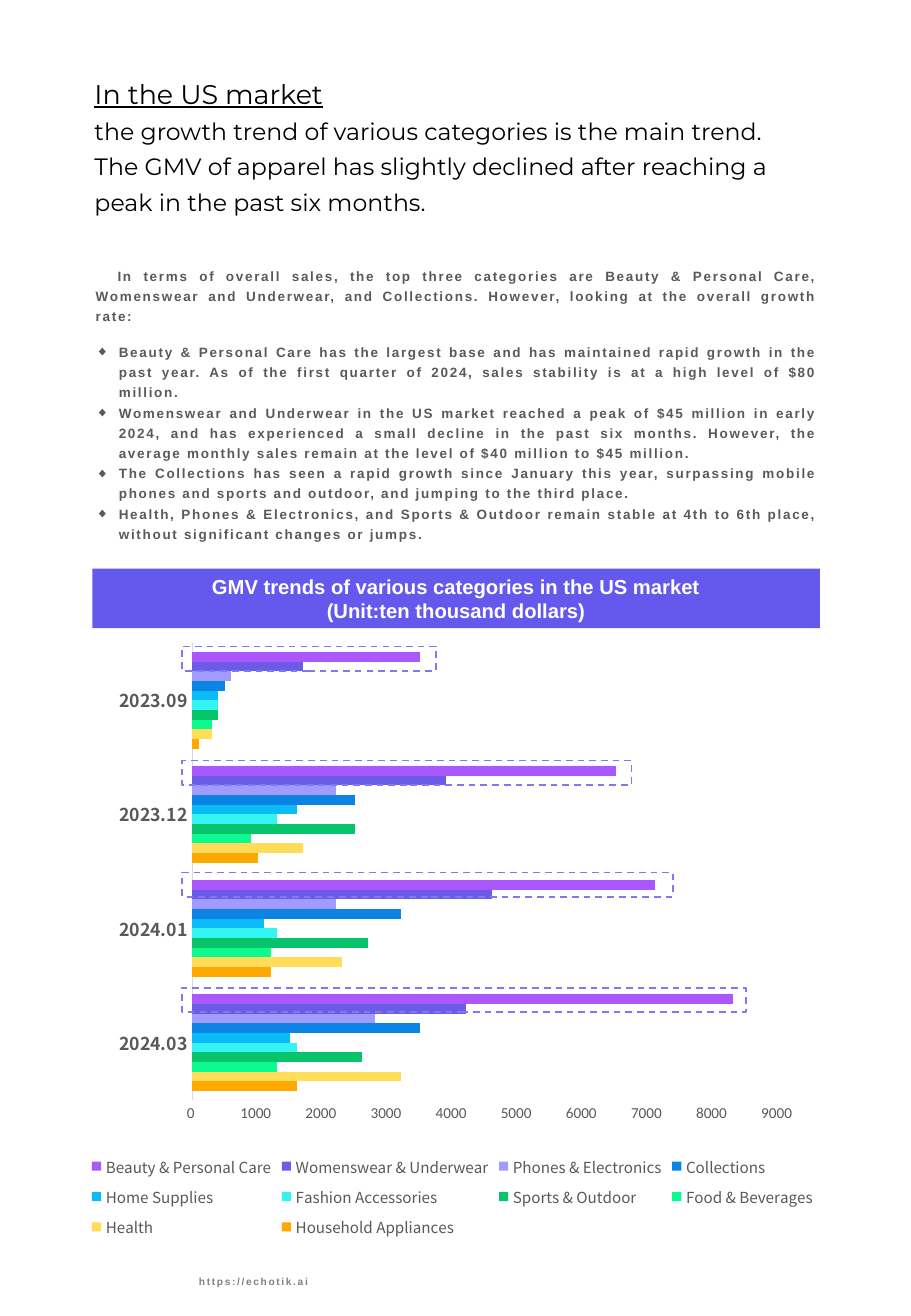
import pptx
import pptx.chart.data
import pptx.dml.color
import pptx.enum.chart
import pptx.enum.dml
import pptx.enum.shapes
import pptx.enum.text
import pptx.oxml
import pptx.oxml.ns
import pptx.util

Inches = pptx.util.Inches
Pt = pptx.util.Pt
RGBColor = pptx.dml.color.RGBColor
ALIGN = pptx.enum.text.PP_ALIGN
qn = pptx.oxml.ns.qn

BLACK = RGBColor(0x00, 0x00, 0x00)
WHITE = RGBColor(0xFF, 0xFF, 0xFF)
TEXT_GREY = RGBColor(0x59, 0x59, 0x59)
FOOTER_GREY = RGBColor(0x80, 0x80, 0x80)
AXIS_GREY = RGBColor(0xD9, 0xD9, 0xD9)
BANNER_PURPLE = RGBColor(0x65, 0x59, 0xED)
DASH_PURPLE = RGBColor(0x81, 0x77, 0xF0)

LABEL_FONT = "Noto Sans CJK SC"

HEADLINE = [
    ("In the US market", 16, True),
    ("the growth trend of various categories is the main trend.", 14, False),
    ("The GMV of apparel has slightly declined after reaching a peak in the past six months.", 14, False),
]
INTRO = (
    "In terms of overall sales, the top three categories are Beauty & Personal Care, "
    "Womenswear and Underwear, and Collections. However, looking at the overall growth rate:"
)
FINDINGS = [
    "Beauty & Personal Care has the largest base and has maintained rapid growth in the past year. "
    "As of the first quarter of 2024, sales stability is at a high level of $80 million.",
    "Womenswear and Underwear in the US market reached a peak of $45 million in early 2024, "
    "and has experienced a small decline in the past six months. However, the average monthly "
    "sales remain at the level of $40 million to $45 million.",
    "The Collections has seen a rapid growth since January this year, surpassing mobile phones "
    "and sports and outdoor, and jumping to the third place.",
    "Health, Phones & Electronics, and Sports & Outdoor remain stable at 4th to 6th place, "
    "without significant changes or jumps.",
]
BANNER = ["GMV trends of various categories in the US market", "(Unit:ten thousand dollars)"]

MONTHS = ["2024.03", "2024.01", "2023.12", "2023.09"]
CATEGORY_SALES = [
    ("Household Appliances", (1600, 1200, 1000, 100), RGBColor(0xFF, 0xA8, 0x00)),
    ("Health", (3200, 2300, 1700, 300), RGBColor(0xFF, 0xDD, 0x58)),
    ("Food & Beverages", (1300, 1200, 900, 300), RGBColor(0x0D, 0xFA, 0x91)),
    ("Sports & Outdoor", (2600, 2700, 2500, 400), RGBColor(0x07, 0xC4, 0x6B)),
    ("Fashion Accessories", (1600, 1300, 1300, 400), RGBColor(0x34, 0xF4, 0xF2)),
    ("Home Supplies", (1500, 1100, 1600, 400), RGBColor(0x0B, 0xBB, 0xF7)),
    ("Collections", (3500, 3200, 2500, 500), RGBColor(0x0B, 0x84, 0xE3)),
    ("Phones & Electronics", (2800, 2200, 2200, 600), RGBColor(0xA2, 0x9B, 0xFE)),
    ("Womenswear & Underwear", (4200, 4600, 3900, 1700), RGBColor(0x6B, 0x5C, 0xE7)),
    ("Beauty & Personal Care", (8300, 7100, 6500, 3500), RGBColor(0xAA, 0x58, 0xFE)),
]
# Top and width of the frame around the two leading categories of each month
LEADER_FRAMES = [(5.32, 2.09), (6.26, 3.7), (7.18, 4.04), (8.13, 4.64)]


def style_font(font, name, size, color, bold=False):
    font.name = name
    font.size = Pt(size)
    font.color.rgb = color
    font.bold = bold


def add_text_box(page, left, top, width, height):
    box = page.shapes.add_textbox(Inches(left), Inches(top), Inches(width), Inches(height))
    box.text_frame.word_wrap = True
    return box.text_frame


def next_paragraph(frame, index, align, line_spacing=None):
    para = frame.add_paragraph() if index else frame.paragraphs[0]
    para.alignment = align
    if line_spacing:
        para.line_spacing = line_spacing
    return para


def add_span(para, text, name, size, color, bold=False):
    span = para.add_run()
    span.text = text
    style_font(span.font, name, size, color, bold)
    return span


def add_spaced_span(para, text, size, color):
    span = add_span(para, text, "Arial", size, color, True)
    span._r.get_or_add_rPr().set("spc", "100")


def set_indent(para, margin, first_line, bullet=None):
    properties = para._p.get_or_add_pPr()
    properties.set("marL", str(Inches(margin)))
    properties.set("indent", str(Inches(first_line)))
    if bullet:
        font = pptx.oxml.parse_xml(f'<a:buFont {pptx.oxml.ns.nsdecls("a")} typeface="Arial"/>')
        mark = pptx.oxml.parse_xml(f'<a:buChar {pptx.oxml.ns.nsdecls("a")} char="{bullet}"/>')
        properties.extend([font, mark])


def add_box(page, kind, left, top, width, height):
    box = page.shapes.add_shape(kind, Inches(left), Inches(top), Inches(width), Inches(height))
    box.shadow.inherit = False
    return box


def add_banner(page):
    box = add_box(page, pptx.enum.shapes.MSO_SHAPE.ROUNDED_RECTANGLE, 0.76, 4.68, 5.99, 0.49)
    box.adjustments[0] = 0
    box.fill.solid()
    box.fill.fore_color.rgb = BANNER_PURPLE
    box.line.fill.background()
    box.text_frame.vertical_anchor = pptx.enum.text.MSO_ANCHOR.MIDDLE
    for index, text in enumerate(BANNER):
        para = next_paragraph(box.text_frame, index, ALIGN.CENTER)
        add_span(para, text, "Arial", 12, WHITE, True)


def add_leader_frame(page, top, width):
    box = add_box(page, pptx.enum.shapes.MSO_SHAPE.RECTANGLE, 1.5, top, width, 0.2)
    box.fill.background()
    box.line.color.rgb = DASH_PURPLE
    box.line.width = Pt(1)
    box.line.dash_style = pptx.enum.dml.MSO_LINE.DASH


def place_in_chart(parent, index, x, y, width, height, inner=False):
    for old in parent.findall(qn("c:layout")):
        parent.remove(old)
    target = '<c:layoutTarget val="inner"/>' if inner else ""
    modes = '<c:xMode val="edge"/><c:yMode val="edge"/>'
    sizes = f'<c:x val="{x}"/><c:y val="{y}"/><c:w val="{width}"/><c:h val="{height}"/>'
    parent.insert(index, pptx.oxml.parse_xml(
        f'<c:layout {pptx.oxml.ns.nsdecls("c")}><c:manualLayout>{target}{modes}{sizes}'
        "</c:manualLayout></c:layout>"))


def add_sales_chart(page):
    data = pptx.chart.data.CategoryChartData(number_format="0_ ")
    data.categories = MONTHS
    for name, values, _ in CATEGORY_SALES:
        data.add_series(name, values)
    chart = page.shapes.add_chart(
        pptx.enum.chart.XL_CHART_TYPE.BAR_CLUSTERED,
        Inches(0.71), Inches(5.17), Inches(6.03), Inches(5.14), data).chart
    chart.has_title = False
    style_font(chart.font, "Calibri", 10, BLACK)

    # Bars
    plot = chart.plots[0]
    plot.gap_width = 182
    plot.overlap = 0
    plot.vary_by_categories = False
    for series, (_, _, color) in zip(plot.series, CATEGORY_SALES):
        series.format.fill.solid()
        series.format.fill.fore_color.rgb = color

    # Axes
    months, amounts = chart.category_axis, chart.value_axis
    for axis in (months, amounts):
        axis.has_major_gridlines = False
        axis.major_tick_mark = axis.minor_tick_mark = pptx.enum.chart.XL_TICK_MARK.NONE
    style_font(months.tick_labels.font, LABEL_FONT, 10.5, TEXT_GREY, True)
    months.format.line.color.rgb = AXIS_GREY
    months.format.line.width = Pt(0.75)
    style_font(amounts.tick_labels.font, "Calibri", 9, TEXT_GREY)
    amounts.tick_labels.number_format = "0_ "
    amounts.tick_labels.number_format_is_linked = False
    amounts.format.line.fill.background()
    amounts.minimum_scale, amounts.maximum_scale, amounts.major_unit = 0, 9000, 1000

    # Legend and plot placement
    chart.has_legend = True
    legend = chart.legend
    legend.position = pptx.enum.chart.XL_LEGEND_POSITION.BOTTOM
    legend.include_in_layout = False
    style_font(legend.font, LABEL_FONT, 9, TEXT_GREY)
    place_in_chart(legend._element, 1, 0, 0.83, 1, 0.16)
    plot_area = chart._chartSpace.find(".//" + qn("c:plotArea"))
    place_in_chart(plot_area, 0, 0.145, 0.024, 0.8, 0.731, inner=True)


def main():
    deck = pptx.Presentation()
    deck.slide_width, deck.slide_height = Inches(7.5), Inches(10.83)
    page = deck.slides.add_slide(deck.slide_layouts[6])

    # Web address at the foot
    para = next_paragraph(add_text_box(page, 1.54, 10.45, 1.34, 0.2), 0, ALIGN.JUSTIFY)
    add_spaced_span(para, "https://echotik.ai", 6, FOOTER_GREY)

    # Headline
    frame = add_text_box(page, 0.68, 0.52, 6.14, 1.59)
    for index, (text, size, underline) in enumerate(HEADLINE):
        para = next_paragraph(frame, index, ALIGN.LEFT, 1.25)
        add_span(para, text, "Montserrat", size, BLACK).font.underline = underline

    # Introduction and findings
    para = next_paragraph(add_text_box(page, 0.69, 2.12, 6.14, 0.59), 0, ALIGN.JUSTIFY, 1.25)
    set_indent(para, 0, 0.18)
    add_spaced_span(para, INTRO, 8, TEXT_GREY)
    frame = add_text_box(page, 0.69, 2.75, 6.14, 1.77)
    for index, text in enumerate(FINDINGS):
        para = next_paragraph(frame, index, ALIGN.JUSTIFY, 1.25)
        set_indent(para, 0.19, -0.19, "◆")
        add_spaced_span(para, text, 8, TEXT_GREY)

    # Sales chart with its banner and frames
    add_banner(page)
    add_sales_chart(page)
    for top, width in LEADER_FRAMES:
        add_leader_frame(page, top, width)

    deck.save("out.pptx")


if __name__ == "__main__":
    main()
